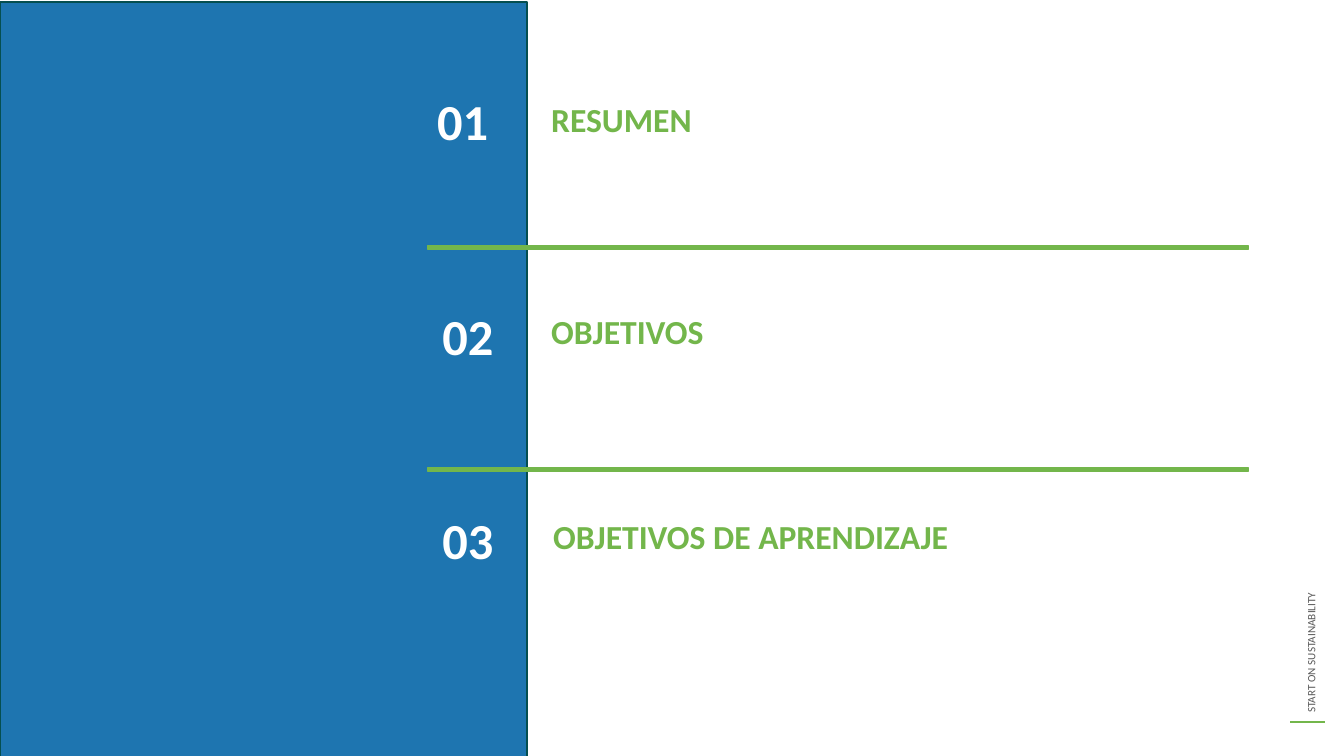
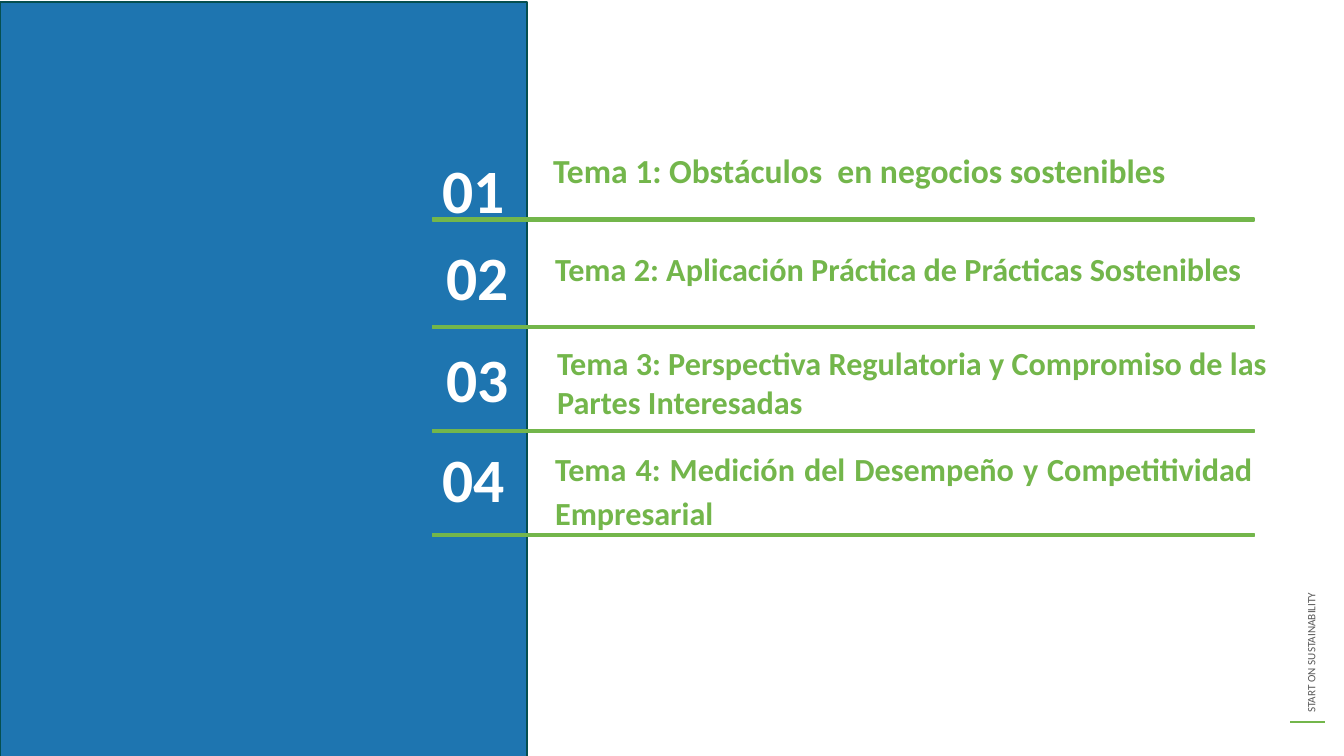
from dataclasses import dataclass

from lxml import etree
from pptx import Presentation
from pptx.dml.color import RGBColor
from pptx.enum import shapes, text
from pptx.oxml import ns
from pptx.slide import Slide
from pptx.util import Cm, Pt

BLUE = RGBColor(0x1E, 0x75, 0xB0)
DARK_TEAL = RGBColor(0x05, 0x4F, 0x50)
GREEN = RGBColor(0x73, 0xB6, 0x4B)
GRAY = RGBColor(0x59, 0x59, 0x59)
WHITE = RGBColor(0xFF, 0xFF, 0xFF)
FONT = "Calibri"


@dataclass(frozen=True)
class Box:
    left: float
    top: float
    width: float
    height: float

    def lengths(self) -> tuple[Cm, Cm, Cm, Cm]:
        return Cm(self.left), Cm(self.top), Cm(self.width), Cm(self.height)


@dataclass(frozen=True)
class TextStyle:
    size: float
    color: RGBColor
    bold: bool = True
    line_spacing: float = 1.0
    align: text.PP_ALIGN = text.PP_ALIGN.LEFT


@dataclass(frozen=True)
class Topic:
    title: str
    number_left: float
    number_top: float
    title_left: float
    title_top: float
    title_width: float = 18.24
    title_height: float = 0.94
    title_size: float = 24
    line_spacing: float = 1.0
    align: text.PP_ALIGN = text.PP_ALIGN.LEFT


@dataclass(frozen=True)
class Agenda:
    topics: tuple[Topic, ...]
    number_size: float
    rule_left: float
    rule_tops: tuple[float, ...]


AGENDAS = (
    Agenda(
        topics=(
            Topic("RESUMEN", 10.77, 1.7, 13.64, 2.36),
            Topic("OBJETIVOS", 10.9, 7.11, 13.64, 7.7, title_height=1.3),
            Topic("OBJETIVOS DE APRENDIZAJE", 10.9, 12.24, 13.69, 12.88),
        ),
        number_size=36,
        rule_left=10.77,
        rule_tops=(6.2, 11.79),
    ),
    Agenda(
        topics=(
            Topic("Tema 1: Obstáculos  en negocios sostenibles",
                  10.9, 3.15, 13.69, 3.66),
            Topic("Tema 2: Aplicación Práctica de Prácticas Sostenibles",
                  11, 5.33, 13.74, 6.17, title_height=2.29, title_size=23),
            Topic("Tema 3: Perspectiva Regulatoria y Compromiso de las Partes Interesadas",
                  11, 7.9, 13.79, 8.53, title_width=19.4, title_height=1.14,
                  title_size=23),
            Topic("Tema 4: Medición del Desempeño y Competitividad Empresarial",
                  10.9, 10.44, 13.74, 11.07, title_width=18.11, title_height=4.01,
                  title_size=23, line_spacing=1.13, align=text.PP_ALIGN.JUSTIFY),
        ),
        number_size=44,
        rule_left=10.9,
        rule_tops=(5.49, 8.2, 10.82, 13.44),
    ),
)


def add_text(slide: Slide, wording: str, box: Box, style: TextStyle,
             rotation: float = 0) -> None:
    label = slide.shapes.add_textbox(*box.lengths())
    label.rotation = rotation
    label.text_frame.word_wrap = True
    paragraph = label.text_frame.paragraphs[0]
    paragraph.text = wording
    paragraph.alignment = style.align
    paragraph.line_spacing = style.line_spacing
    paragraph.font.name = FONT
    paragraph.font.size = Pt(style.size)
    paragraph.font.bold = style.bold
    paragraph.font.color.rgb = style.color


def add_bar(slide: Slide, box: Box, fill: RGBColor, outline: RGBColor) -> None:
    bar = slide.shapes.add_shape(shapes.MSO_SHAPE.RECTANGLE, *box.lengths())
    bar.shadow.inherit = False
    bar.fill.solid()
    bar.fill.fore_color.rgb = fill
    bar.line.color.rgb = outline
    bar.line.width = Pt(1)


def add_frame(slide: Slide) -> None:
    add_text(slide, "START ON SUSTAINABILITY", Box(27.38, 12.24, 11.33, 0.61),
             TextStyle(8, GRAY, bold=False), rotation=270)
    footer_line = slide.shapes.add_connector(
        shapes.MSO_CONNECTOR.STRAIGHT, Cm(32.51), Cm(18.19), Cm(33.4), Cm(18.19))
    footer_line.line.color.rgb = GREEN
    footer_line.line.width = Pt(1)
    etree.SubElement(footer_line._element.spPr, ns.qn("a:effectLst"))
    add_bar(slide, Box(0, 0.05, 13.28, 19.05), BLUE, DARK_TEAL)


def add_topic(slide: Slide, number: int, topic: Topic, number_size: float) -> None:
    add_text(slide, topic.title,
             Box(topic.title_left, topic.title_top, topic.title_width, topic.title_height),
             TextStyle(topic.title_size, GREEN, line_spacing=topic.line_spacing,
                       align=topic.align))
    add_text(slide, f"{number:02d}",
             Box(topic.number_left, topic.number_top, 3.43, 2.67),
             TextStyle(number_size, WHITE, line_spacing=1.3))


def add_agenda(deck: Presentation, agenda: Agenda) -> None:
    slide = deck.slides.add_slide(deck.slide_layouts[6])
    add_frame(slide)
    for number, topic in enumerate(agenda.topics, start=1):
        add_topic(slide, number, topic, agenda.number_size)
    for rule_top in agenda.rule_tops:
        add_bar(slide, Box(agenda.rule_left, rule_top, 20.7, 0.08), GREEN, GREEN)


def main() -> None:
    deck = Presentation()
    deck.slide_width, deck.slide_height = Cm(33.87), Cm(19.05)
    for agenda in AGENDAS:
        add_agenda(deck, agenda)
    deck.save("out.pptx")


if __name__ == "__main__":
    main()
